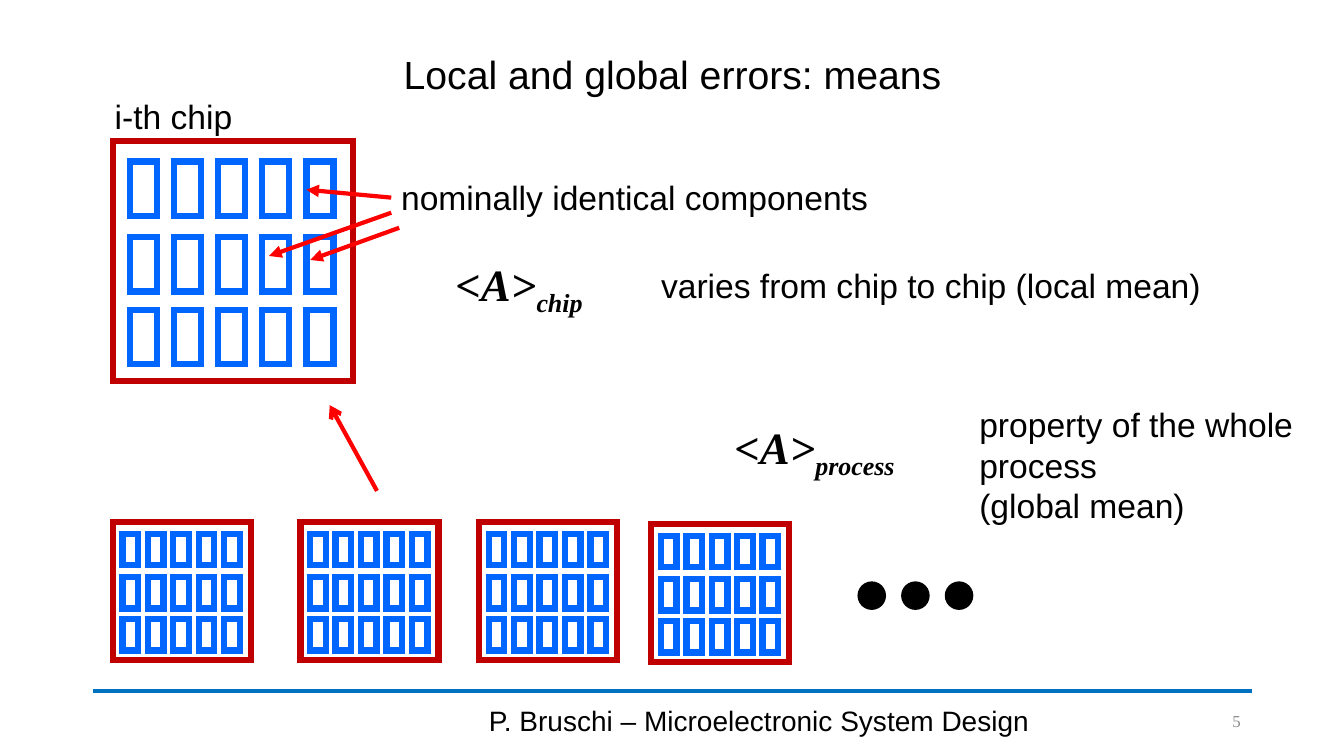
from dataclasses import dataclass

from lxml.etree import SubElement
from pptx import Presentation
from pptx.dml.color import RGBColor
from pptx.enum.shapes import MSO_CONNECTOR, MSO_SHAPE
from pptx.enum.text import MSO_ANCHOR as Anchor, MSO_AUTO_SIZE as AutoSize, PP_ALIGN as Align
from pptx.oxml.ns import qn
from pptx.util import Cm, Pt


@dataclass(frozen=True)
class Theme:
    sans: str = "Arial"
    serif: str = "Times New Roman"
    ink: str = "000000"
    muted: str = "8C8C8C"
    chip: str = "C00000"
    component: str = "0066FF"
    arrow: str = "FF0000"
    rule: str = "0070C0"
    title: int = 28
    label: int = 24
    symbol: int = 32
    footer: int = 20
    number: int = 12
    outline: float = 4.5
    arrow_width: float = 3
    rule_width: float = 2.75


THEME = Theme()

# Chip layout, as fractions of the chip's side
COLUMNS = [0.071 + 0.184 * column for column in range(5)]
ROWS = [0.084, 0.399, 0.702]
COMPONENT_WIDTH, COMPONENT_HEIGHT = 0.113, 0.227


def style(paragraph, size, color=THEME.ink, face=THEME.sans, align=Align.LEFT):
    paragraph.alignment = align
    paragraph.font.name = face
    paragraph.font.size = Pt(size)
    paragraph.font.color.rgb = RGBColor.from_string(color)


def add_text(slide, box, lines, size=THEME.label, anchor=Anchor.TOP, wrap=False, **look):
    frame = slide.shapes.add_textbox(*map(Cm, box)).text_frame
    frame.word_wrap = wrap
    frame.vertical_anchor = anchor
    frame.text = "\n".join(lines)
    for paragraph in frame.paragraphs:
        style(paragraph, size, **look)


def add_mean(slide, box, subscript):
    frame = slide.shapes.add_textbox(*map(Cm, box)).text_frame
    frame.word_wrap = True
    mean = frame.paragraphs[0]
    style(mean, THEME.symbol, face=THEME.serif)
    mean.font.bold = mean.font.italic = True
    mean.add_run().text = "<A>"
    index = mean.add_run()
    index.text = subscript
    index._r.get_or_add_rPr().set("baseline", "-25000")


def add_outlined(shapes, kind, box, color, filled=False):
    shape = shapes.add_shape(kind, *map(Cm, box))
    shape.shadow.inherit = False
    if filled:
        shape.fill.solid()
        shape.fill.fore_color.rgb = RGBColor.from_string(color)
    else:
        shape.fill.background()
    shape.line.color.rgb = RGBColor.from_string(color)
    shape.line.width = Pt(THEME.outline)
    SubElement(shape.line._get_or_add_ln(), qn("a:miter"), lim="800000")


def add_chip(shapes, left, top, side):
    add_outlined(shapes, MSO_SHAPE.RECTANGLE, (left, top, side, side), THEME.chip)
    for row in ROWS:
        for column in COLUMNS:
            component = (left + column * side, top + row * side,
                         COMPONENT_WIDTH * side, COMPONENT_HEIGHT * side)
            add_outlined(shapes, MSO_SHAPE.RECTANGLE, component, THEME.component)


def add_line(slide, start, end, color=THEME.arrow, width=THEME.arrow_width, head=None):
    line = slide.shapes.add_connector(MSO_CONNECTOR.STRAIGHT, *map(Cm, (*start, *end)))
    line.line.color.rgb = RGBColor.from_string(color)
    line.line.width = Pt(width)
    if head:
        SubElement(line.line._get_or_add_ln(), qn("a:tailEnd"), type=head)
    SubElement(line._element.spPr, qn("a:effectLst"))


def set_title(slide, text):
    title = slide.shapes.title
    title.left, title.top, title.width, title.height = map(Cm, (2.34, 1.02, 29.21, 1.83))
    frame = title.text_frame
    frame.text = text
    frame.auto_size = AutoSize.NONE
    frame.vertical_anchor = Anchor.MIDDLE
    style(frame.paragraphs[0], THEME.title, align=Align.CENTER)
    frame.paragraphs[0].line_spacing = 0.9


def main():
    deck = Presentation()
    deck.slide_width, deck.slide_height = Cm(33.87), Cm(19.05)
    slide = deck.slides.add_slide(deck.slide_layouts[5])

    # Title and footer
    set_title(slide, "Local and global errors: means")
    add_line(slide, (2.34, 17.42), (31.55, 17.42), THEME.rule, THEME.rule_width)
    add_text(slide, (11.23, 17.65, 15.8, 1.02), ["P. Bruschi – Microelectronic System Design"],
             THEME.footer, Anchor.MIDDLE, wrap=True, align=Align.CENTER)
    add_text(slide, (29.08, 17.65, 2.44, 1.02), ["5"], THEME.number, Anchor.MIDDLE, wrap=True,
             color=THEME.muted, face=THEME.serif, align=Align.RIGHT)

    # Enlarged chip and its components
    add_chip(slide.shapes, 2.84, 3.56, 6.05)
    add_text(slide, (2.64, 2.29, 3.51, 1.27), ["i-th chip"])
    add_text(slide, (9.86, 4.34, 12.42, 1.27), ["nominally identical components"])
    for start, end in [((9.86, 4.98), (7.72, 4.78)),
                       ((10.06, 5.74), (7.82, 6.55)),
                       ((9.86, 5.36), (6.78, 6.45))]:
        add_line(slide, start, end, head="triangle")

    # Chips of the process
    for left, top in [(2.84, 13.16), (7.57, 13.16), (12.07, 13.16), (16.41, 13.21)]:
        add_chip(slide.shapes.add_group_shape().shapes, left, top, 3.48)
    for dot in range(3):
        add_outlined(slide.shapes, MSO_SHAPE.OVAL, (21.69 + 1.1 * dot, 14.73, 0.56, 0.56),
                     THEME.ink, filled=True)
    add_line(slide, (9.5, 12.37), (8.31, 10.21), head="arrow")

    # Local and global means
    add_mean(slide, (11.23, 6.35, 4.65, 1.63), "chip")
    add_text(slide, (16.41, 6.55, 14.25, 1.27), ["varies from chip to chip (local mean)"])
    add_mean(slide, (18.26, 10.44, 5.61, 1.63), "process")
    add_text(slide, (24.43, 10.06, 8.51, 3.33),
             ["property of the whole", "process", "(global mean)"])

    deck.save("out.pptx")


if __name__ == "__main__":
    main()
